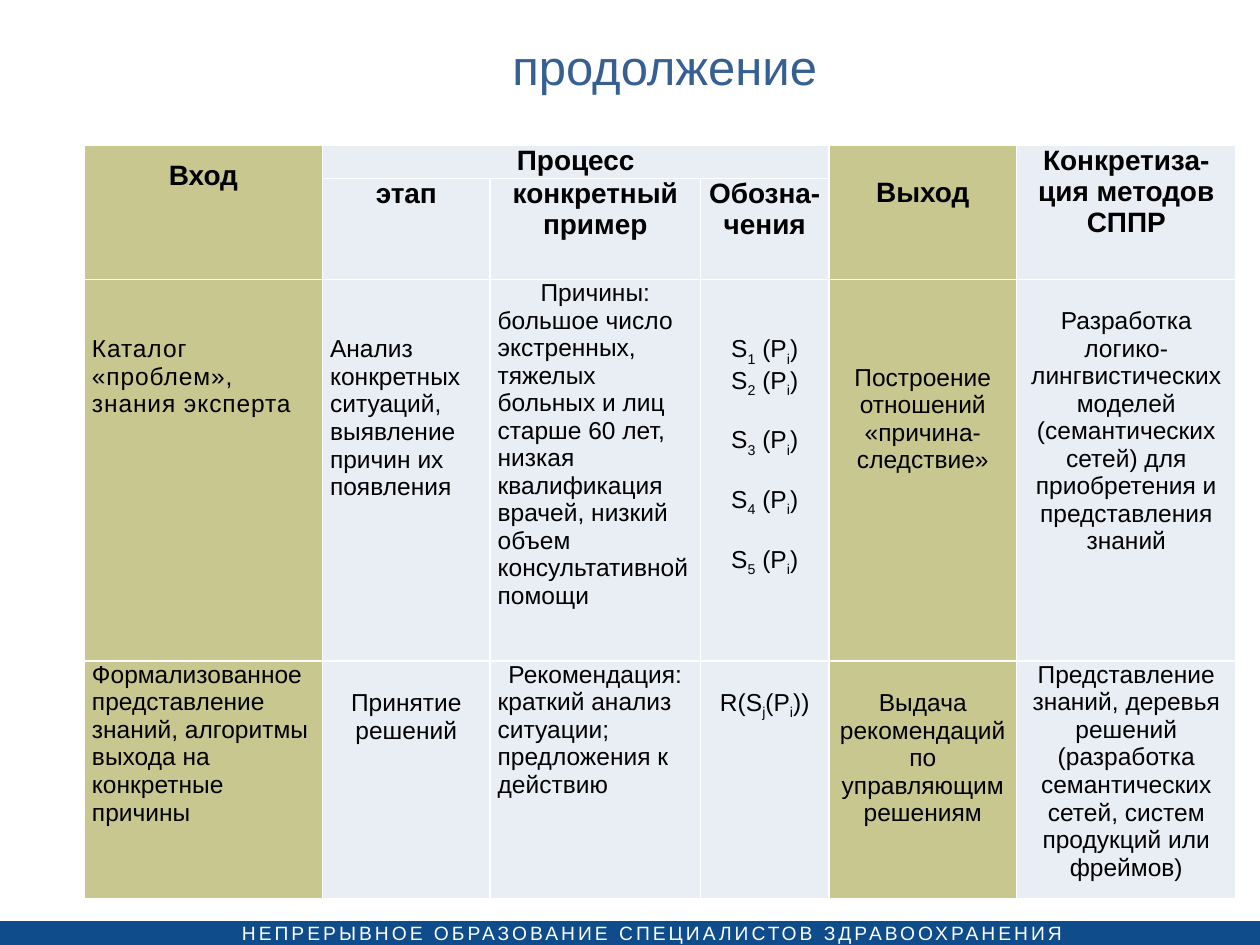
from dataclasses import dataclass

from lxml import etree
from pptx import Presentation
from pptx import util as u
from pptx.dml.color import RGBColor
from pptx.enum import shapes, text
from pptx.oxml import ns

FONT = "Arial"
OLIVE, PALE, WHITE, BLACK = "C8C78F", "E9EDF4", "FFFFFF", "000000"
NAVY, TITLE_BLUE = "0F4C8B", "376092"
CENTER, LEFT = text.PP_ALIGN.CENTER, text.PP_ALIGN.LEFT
LINE = 16.1  # height of one 14 pt line, in points
COLUMN_WIDTHS = [1.89, 1.33, 1.67, 1.02, 1.49, 1.74]
ROW_HEIGHTS = [0.26, 0.8, 3.03, 1.89]
OLIVE_COLUMNS = (0, 4)


@dataclass
class Line:
    """One paragraph; an underscore lowers the character after it."""
    words: str
    align: int = CENTER
    before: float = 0


@dataclass
class TableCell:
    row: int
    column: int
    lines: list
    top: float = 0
    spacing: float = 1
    tracking: int = 0


def color(value: str) -> RGBColor:
    return RGBColor.from_string(value)


def add_run(paragraph, words: str, size: float, fill: str, bold: bool,
            tracking: int, lowered: bool) -> None:
    run = paragraph.add_run()
    run.text = words
    run.font.name, run.font.size, run.font.bold = FONT, u.Pt(size), bold
    run.font.color.rgb = color(fill)
    properties = run.font._element
    if tracking:
        properties.set("spc", str(tracking))
    if lowered:
        properties.set("baseline", "-25000")


def write(frame, lines: list, *, size: float = 14, fill: str = BLACK,
          bold: bool = False, spacing: float = 1, tracking: int = 0) -> None:
    """Fill a text frame with formatted paragraphs."""
    for index, line in enumerate(lines):
        paragraph = frame.add_paragraph() if index else frame.paragraphs[0]
        paragraph.alignment = line.align
        paragraph.line_spacing = spacing
        if index and line.before:
            paragraph.space_before = u.Pt(line.before)
        first, *marked = line.words.split("_")
        add_run(paragraph, first, size, fill, bold, tracking, False)
        for part in marked:
            add_run(paragraph, part[0], size, fill, bold, tracking, True)
            if part[1:]:
                add_run(paragraph, part[1:], size, fill, bold, tracking, False)


def set_borders(cell) -> None:
    properties = cell._tc.get_or_add_tcPr()
    for index, side in enumerate(("lnL", "lnR", "lnT", "lnB")):
        border = etree.Element(ns.qn(f"a:{side}"), w=str(u.Pt(1)))
        solid = etree.SubElement(border, ns.qn("a:solidFill"))
        etree.SubElement(solid, ns.qn("a:srgbClr"), val=WHITE)
        properties.insert(index, border)


def add_footer(slide) -> None:
    band = slide.shapes.add_shape(
        shapes.MSO_SHAPE.RECTANGLE, u.Inches(0), u.Inches(7.31),
        u.Inches(10), u.Inches(0.19))
    band.shadow.inherit = False
    band.fill.solid()
    band.fill.fore_color.rgb = color(NAVY)
    band.line.fill.background()
    label = slide.shapes.add_textbox(
        u.Inches(1.92), u.Inches(7.31), u.Inches(6.63), u.Inches(0.19))
    frame = label.text_frame
    frame.word_wrap = True
    frame.margin_left = frame.margin_right = 0
    frame.margin_top = frame.margin_bottom = 0
    write(frame, [Line("НЕПРЕРЫВНОЕ ОБРАЗОВАНИЕ СПЕЦИАЛИСТОВ ЗДРАВООХРАНЕНИЯ", LEFT)],
          size=11, fill=WHITE, tracking=170)


def add_stage_table(slide, cells: list):
    table = slide.shapes.add_table(
        len(ROW_HEIGHTS), len(COLUMN_WIDTHS), u.Inches(0.67), u.Inches(1.15),
        u.Inches(sum(COLUMN_WIDTHS)), u.Inches(sum(ROW_HEIGHTS))).table
    table.first_row = table.horz_banding = False
    for column, width in zip(table.columns, COLUMN_WIDTHS):
        column.width = u.Inches(width)
    for row, height in zip(table.rows, ROW_HEIGHTS):
        row.height = u.Inches(height)

    # Fills, borders and margins
    for row in table.rows:
        for index, cell in enumerate(row.cells):
            cell.fill.solid()
            cell.fill.fore_color.rgb = color(OLIVE if index in OLIVE_COLUMNS else PALE)
            set_borders(cell)
            cell.margin_left = cell.margin_right = u.Inches(0.06)
            cell.margin_top = cell.margin_bottom = 0

    # Header spans
    table.cell(0, 1).merge(table.cell(0, 3))
    for column in (0, 4, 5):
        table.cell(0, column).merge(table.cell(1, column))

    # Wording
    for item in cells:
        cell = table.cell(item.row, item.column)
        header = item.row < 2
        cell.margin_top = u.Pt(item.top)
        write(cell.text_frame, item.lines, size=16 if header else 14,
              bold=header, spacing=item.spacing, tracking=item.tracking)
    return table


def main() -> None:
    presentation = Presentation()
    presentation.slide_width, presentation.slide_height = u.Inches(10), u.Inches(7.5)
    slide = presentation.slides.add_slide(presentation.slide_layouts[5])

    # Title
    title = slide.shapes.title
    title.left, title.top = u.Inches(0.67), u.Inches(0.13)
    title.width, title.height = u.Inches(9.21), u.Inches(0.79)
    title.text_frame.vertical_anchor = text.MSO_ANCHOR.MIDDLE
    write(title.text_frame, [Line("продолжение")], size=28, fill=TITLE_BLUE)

    add_footer(slide)

    # Table of stages
    situations = [Line(f"S_{number} (P_i)", before=LINE if number > 2 else 0)
                  for number in range(1, 6)]
    add_stage_table(slide, [
        TableCell(0, 0, [Line("Вход")], spacing=1.5),
        TableCell(0, 1, [Line("Процесс")]),
        TableCell(0, 4, [Line("Выход")], top=18.4),
        TableCell(0, 5, [Line("Конкретиза-ция методов СППР")]),
        TableCell(1, 1, [Line("этап")]),
        TableCell(1, 2, [Line("конкретный пример")]),
        TableCell(1, 3, [Line("Обозна-"), Line("чения")]),
        TableCell(2, 0, [Line("Каталог «проблем», знания эксперта", LEFT)],
                  top=2 * LINE, tracking=50),
        TableCell(2, 1, [Line("Анализ конкретных ситуаций, выявление причин "
                              "их появления", LEFT)], top=2 * LINE),
        TableCell(2, 2, [
            Line("Причины:"),
            Line("большое число экстренных, тяжелых больных и лиц старше 60 лет, "
                 "низкая квалификация врачей, низкий объем консультативной помощи",
                 LEFT)]),
        TableCell(2, 3, situations, top=2 * LINE),
        TableCell(2, 4, [Line("Построение отношений"), Line("«причина-следствие»")],
                  top=3 * LINE),
        TableCell(2, 5, [Line("Разработка логико-лингвистических моделей "
                              "(семантических сетей) для приобретения и "
                              "представления знаний")], top=LINE),
        TableCell(3, 0, [Line("Формализованное представление знаний, алгоритмы "
                              "выхода на конкретные причины", LEFT)]),
        TableCell(3, 1, [Line("Принятие решений")], top=LINE),
        TableCell(3, 2, [Line("Рекомендация:"), Line("краткий анализ ситуации;", LEFT),
                         Line("предложения к действию", LEFT)]),
        TableCell(3, 3, [Line("R(S_j(P_i))")], top=LINE),
        TableCell(3, 4, [Line("Выдача рекомендаций"),
                         Line("по управляющим решениям")], top=LINE),
        TableCell(3, 5, [Line("Представление знаний, деревья решений (разработка "
                              "семантических сетей, систем продукций или фреймов)")]),
    ])
    presentation.save("out.pptx")


if __name__ == "__main__":
    main()
